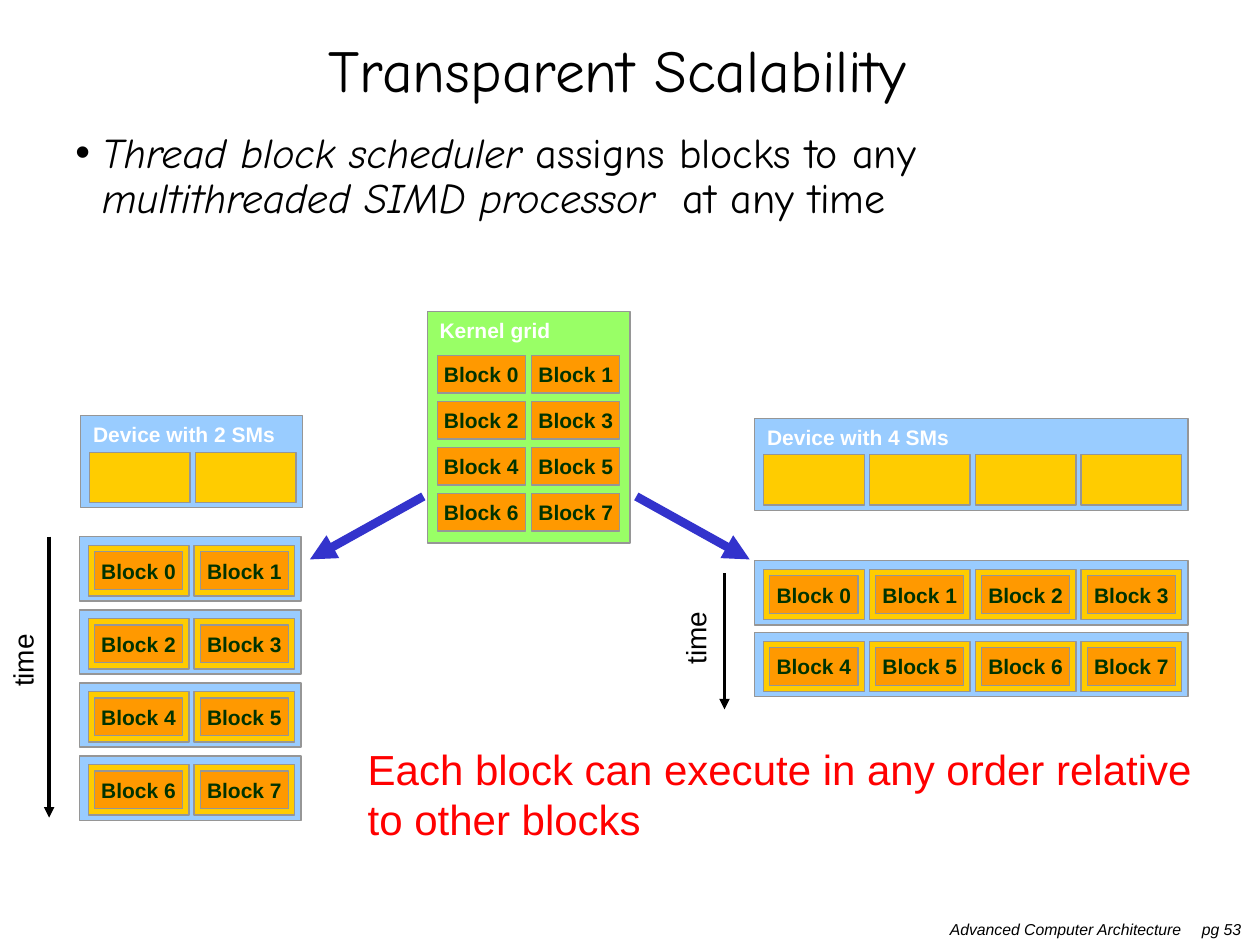
from lxml.etree import SubElement
from pptx import Presentation
from pptx.dml.color import RGBColor
from pptx.enum.shapes import MSO_CONNECTOR as Connector, MSO_SHAPE as Shape
from pptx.enum.text import MSO_ANCHOR as Anchor, MSO_AUTO_SIZE as AutoSize, PP_ALIGN as Align
from pptx.oxml.ns import qn
from pptx.util import Inches, Pt

COLORS = {
    "text": "000000", "label": "FFFFFF", "block_text": "003300", "note": "FF0000",
    "device": "99CCFF", "sm": "FFCC00", "block": "FF9900", "grid": "99FF66",
    "border": "969696", "arrow": "3333CC",
}
SLIDE_W, SLIDE_H = 10, 7.5
SM_W, SM_H, SM_PITCH = 0.8, 0.4, 0.84
BLOCK_W, BLOCK_H, BLOCK_INSET = 0.7, 0.3, 0.05
GRID_PITCH_X, GRID_PITCH_Y = 0.75, 0.365
PAD = 0.07
BLOCK_COUNT = 8


def color(name):
    return RGBColor.from_string(COLORS[name])


def add_run(paragraph, text, size, tint="text", font="Arial", bold=False, italic=False):
    run = paragraph.add_run()
    run.text = text
    run.font.name = font
    run.font.size = Pt(size)
    run.font.bold = bold
    run.font.italic = italic
    run.font.color.rgb = color(tint)


def add_text_area(shapes, left, top, width, height, wrap=True):
    area = shapes.add_textbox(Inches(left), Inches(top), Inches(width), Inches(height))
    area.text_frame.word_wrap = wrap
    return area


def add_panel(shapes, left, top, width, height, fill):
    panel = shapes.add_shape(Shape.RECTANGLE, Inches(left), Inches(top), Inches(width), Inches(height))
    panel.shadow.inherit = False
    panel.fill.solid()
    panel.fill.fore_color.rgb = color(fill)
    panel.line.color.rgb = color("border")
    panel.line.width = Pt(0.75)
    return panel


def add_labelled_panel(shapes, left, top, width, height, fill, label):
    frame = add_panel(shapes, left, top, width, height, fill).text_frame
    frame.vertical_anchor = Anchor.TOP
    frame.paragraphs[0].alignment = Align.LEFT
    add_run(frame.paragraphs[0], label, 12, "label", bold=True)


def add_block(shapes, left, top, number):
    frame = add_panel(shapes, left, top, BLOCK_W, BLOCK_H, "block").text_frame
    frame.word_wrap = False
    frame.vertical_anchor = Anchor.MIDDLE
    frame.paragraphs[0].alignment = Align.CENTER
    add_run(frame.paragraphs[0], f"Block {number}", 12, "block_text", bold=True)


def device_width(sm_count):
    return sm_count * SM_PITCH + 0.08


def add_device(shapes, left, top, sm_count):
    add_labelled_panel(shapes, left, top, device_width(sm_count), 0.73,
                       "device", f"Device with {sm_count} SMs")
    for column in range(sm_count):
        add_panel(shapes, left + PAD + column * SM_PITCH, top + 0.29, SM_W, SM_H, "sm")


def add_schedule(shapes, left, top, sm_count, row_pitch):
    """Stack one device row per time step, with one block on each SM."""
    for first in range(0, BLOCK_COUNT, sm_count):
        row_top = top + first // sm_count * row_pitch
        add_panel(shapes, left, row_top, device_width(sm_count), 0.51, "device")
        for column in range(sm_count):
            sm_left, sm_top = left + PAD + column * SM_PITCH, row_top + PAD
            add_panel(shapes, sm_left, sm_top, SM_W, SM_H, "sm")
            add_block(shapes, sm_left + BLOCK_INSET, sm_top + BLOCK_INSET, first + column)


def add_kernel_grid(shapes, left, top):
    add_labelled_panel(shapes, left, top, 1.61, 1.84, "grid", "Kernel grid")
    for number in range(BLOCK_COUNT):
        row, column = divmod(number, 2)
        add_block(shapes, left + 0.08 + column * GRID_PITCH_X,
                  top + 0.35 + row * GRID_PITCH_Y, number)


def add_arrow(shapes, start, end, tint, width):
    arrow = shapes.add_connector(Connector.STRAIGHT, *(Inches(value) for value in (*start, *end)))
    arrow.line.color.rgb = color(tint)
    arrow.line.width = Pt(width)
    SubElement(arrow.line._get_or_add_ln(), qn("a:tailEnd"), type="triangle")
    SubElement(arrow._element.spPr, qn("a:effectLst"))


def add_time_label(shapes, center_x, center_y):
    width, height = 0.62, 0.37
    label = add_text_area(shapes, center_x - width / 2, center_y - height / 2, width, height, wrap=False)
    label.rotation = 270
    label.text_frame.auto_size = AutoSize.SHAPE_TO_FIT_TEXT
    add_run(label.text_frame.paragraphs[0], "time", 16)


def add_title(shapes):
    frame = add_text_area(shapes, 0.75, 0.31, 8.3, 0.58).text_frame
    frame.vertical_anchor = Anchor.MIDDLE
    heading = frame.paragraphs[0]
    heading.alignment = Align.CENTER
    heading.line_spacing = 0.8
    add_run(heading, "Transparent Scalability", 34, font="Comic Neue")


def add_bullet(shapes):
    point = add_text_area(shapes, 0.5, 1, 8.83, 1.92).text_frame.paragraphs[0]
    point.line_spacing = 0.9
    point.space_before = Pt(4.8)
    properties = point._p.get_or_add_pPr()
    properties.set("marL", str(Inches(0.21)))
    properties.set("indent", str(Inches(-0.21)))
    SubElement(properties, qn("a:buFont"), typeface="Arial")
    SubElement(properties, qn("a:buChar"), char="•")
    for text, italic in (("Thread block scheduler", True), (" assigns blocks to any ", False),
                         ("multithreaded SIMD processor", True), ("  at any time", False)):
        add_run(point, text, 24, font="Comic Neue", italic=italic)


def add_footer(shapes):
    """Set the course name and the page number apart with a tab stop."""
    footer = add_text_area(shapes, 7.13, 7.25, 2.87, 0.25).text_frame.paragraphs[0]
    properties = footer._p.get_or_add_pPr()
    properties.set("marL", str(Inches(0.31)))
    properties.set("indent", "0")
    stops = SubElement(properties, qn("a:tabLst"))
    SubElement(stops, qn("a:tab"), pos=str(Inches(2.36)), algn="l")
    add_run(footer, "Advanced Computer Architecture\tpg 53", 9, italic=True)


def add_note(shapes):
    note = add_text_area(shapes, 2.82, 5.85, 6.93, 0.91).text_frame.paragraphs[0]
    add_run(note, "Each block can execute in any order relative to other blocks", 24, "note")


def main():
    deck = Presentation()
    deck.slide_width, deck.slide_height = Inches(SLIDE_W), Inches(SLIDE_H)
    shapes = deck.slides.add_slide(deck.slide_layouts[6]).shapes

    add_footer(shapes)
    add_title(shapes)
    add_bullet(shapes)

    two_sm = shapes.add_group_shape().shapes
    add_device(two_sm, 0.64, 3.3, 2)
    add_arrow(two_sm, (0.39, 4.26), (0.39, 6.49), "text", 2)
    add_schedule(two_sm, 0.63, 4.26, 2, 0.58)

    add_kernel_grid(shapes.add_group_shape().shapes, 3.39, 2.47)

    four_sm = shapes.add_group_shape().shapes
    add_device(four_sm, 5.99, 3.32, 4)
    add_schedule(four_sm, 5.99, 4.45, 4, 0.57)
    add_arrow(shapes, (5.75, 4.55), (5.75, 5.63), "text", 2)

    add_arrow(shapes, (3.36, 3.94), (2.46, 4.44), "arrow", 5)
    add_arrow(shapes, (5.05, 3.94), (5.95, 4.44), "arrow", 5)
    add_note(shapes)
    add_time_label(shapes, 5.52, 5.06)
    add_time_label(shapes, 0.18, 5.24)

    deck.save("out.pptx")


if __name__ == "__main__":
    main()
